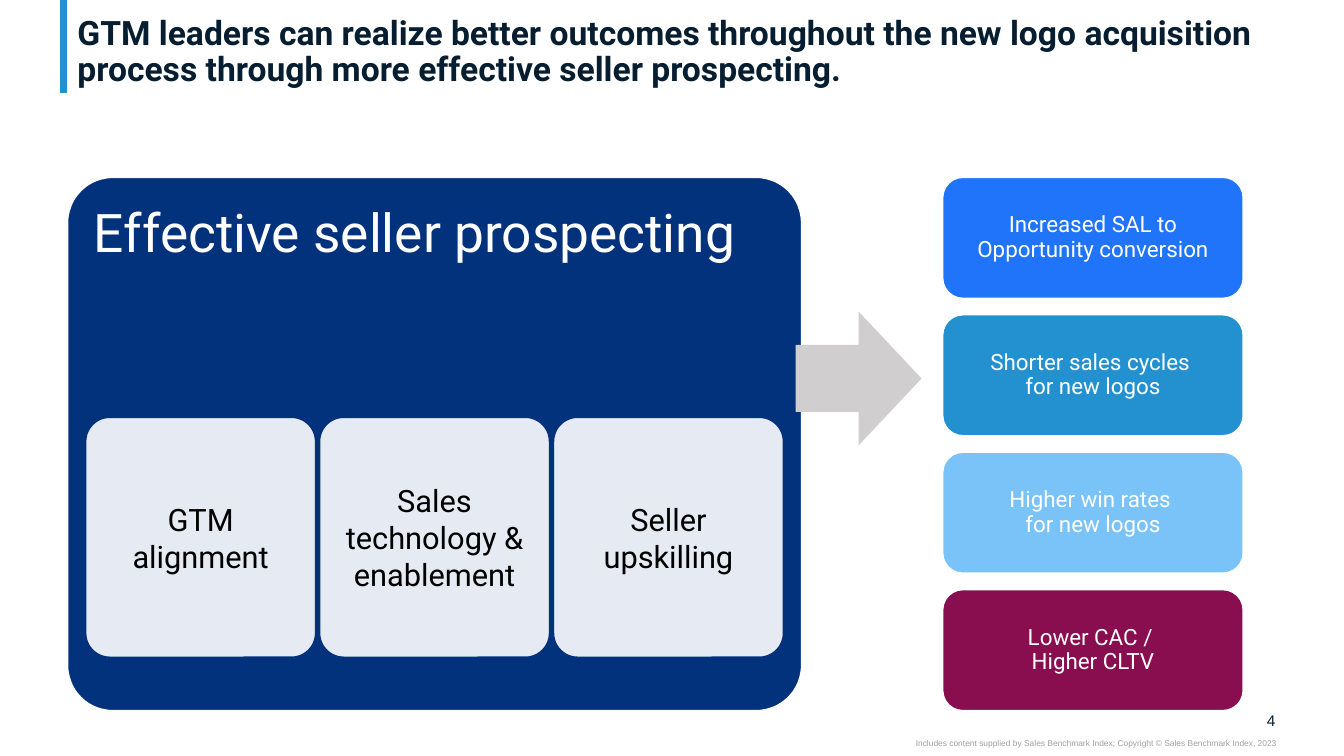
from copy import deepcopy

from lxml.etree import SubElement
from pptx import Presentation
from pptx.dml.color import RGBColor
from pptx.enum.shapes import MSO_CONNECTOR as CONNECTOR, MSO_SHAPE as SHAPE
from pptx.enum.text import MSO_ANCHOR as ANCHOR, PP_ALIGN as ALIGN
from pptx.oxml.ns import qn
from pptx.util import Inches, Pt

# Content
TITLE = ("GTM leaders can realize better outcomes throughout the new logo acquisition "
         "process through more effective seller prospecting.")
DRIVER = "Effective seller prospecting"
ENABLERS = ["GTM alignment", "Sales technology & enablement", "Seller\nupskilling"]
OUTCOMES = [
    ("Increased SAL to Opportunity conversion", "1F74FA"),
    ("Shorter sales cycles \nfor new logos", "2391CF"),
    ("Higher win rates \nfor new logos", "7AC3F8"),
    ("Lower CAC / \nHigher CLTV", "880E4F"),
]
PAGE = "4"
CREDIT = ("Includes content supplied by Sales Benchmark Index; "
          "Copyright © Sales Benchmark Index, 2023")

NAVY, INK, ACCENT, WHITE = "03327C", "071E31", "2391CF", "FFFFFF"

# Layout in inches
TOP, HEIGHT = 1.76, 5.29
PANEL_LEFT, PANEL_WIDTH = 0.67, 7.28
CARD_LEFT, CARD_TOP, CARD_WIDTH, CARD_HEIGHT = 0.85, 4.14, 2.28, 2.38
CARD_STEP = 2.32
OUTCOME_LEFT, OUTCOME_WIDTH, OUTCOME_HEIGHT = 9.35, 2.98, 1.2
OUTCOME_STEP = (HEIGHT - OUTCOME_HEIGHT) / (len(OUTCOMES) - 1)

prs = Presentation()
prs.slide_width, prs.slide_height = Inches(13.33), Inches(7.5)
slide = prs.slides.add_slide(prs.slide_layouts[6])


def paint(color_format, color):
    color_format.rgb = RGBColor.from_string(color)


def write(shape, text, size, color, font="Roboto", bold=False, align=ALIGN.LEFT,
          anchor=ANCHOR.TOP, spacing=1.0, margins=(0, 0)):
    frame = shape.text_frame
    frame.word_wrap = True
    frame.vertical_anchor = anchor
    frame.margin_left = frame.margin_right = Inches(margins[0])
    frame.margin_top = frame.margin_bottom = Inches(margins[1])
    paragraph = frame.paragraphs[0]
    paragraph.text = text
    paragraph.alignment = align
    paragraph.line_spacing = spacing
    for run in paragraph.runs:
        run.font.name, run.font.size, run.font.bold = font, Pt(size), bold
        paint(run.font.color, color)
    # Line breaks take the size of the text around them
    for line_break in paragraph._p.findall(qn("a:br")):
        line_break.append(deepcopy(paragraph.runs[0]._r.get_or_add_rPr()))


def add_text(box, text, **style):
    write(slide.shapes.add_textbox(*map(Inches, box)), text, **style)


def add_block(kind, box, fill, line=None, corner=None):
    block = slide.shapes.add_shape(kind, *map(Inches, box))
    block.shadow.inherit = False
    block.fill.solid()
    paint(block.fill.fore_color, fill)
    if line:
        paint(block.line.color, line)
        block.line.width = Pt(1)
    else:
        block.line.fill.background()
    if corner:
        block.adjustments[0] = corner
    return block


# Title with accent bar
bar = slide.shapes.add_connector(CONNECTOR.STRAIGHT, Inches(0.63), 0, Inches(0.63), Inches(0.92))
paint(bar.line.color, ACCENT)
bar.line.width = Pt(5)
SubElement(bar._element.spPr, qn("a:effectLst"))
add_text((0.67, 0.04, 11.99, 0.84), TITLE, size=24, color=INK, bold=True,
         anchor=ANCHOR.BOTTOM, spacing=0.9, margins=(0.1, 0))

# Driver panel
panel = add_block(SHAPE.ROUNDED_RECTANGLE, (PANEL_LEFT, TOP, PANEL_WIDTH, HEIGHT),
                  NAVY, WHITE, corner=0.085)
write(panel, DRIVER, size=38, color=WHITE, spacing=0.9, margins=(0.13, 0.16))

# Enabler cards
for i, enabler in enumerate(ENABLERS):
    card = add_block(SHAPE.ROUNDED_RECTANGLE,
                     (CARD_LEFT + i * CARD_STEP, CARD_TOP, CARD_WIDTH, CARD_HEIGHT),
                     WHITE, NAVY, corner=0.105)
    white_fill = card._element.spPr.find(qn("a:solidFill"))
    SubElement(white_fill[0], qn("a:alpha"), val="90000")
    write(card, enabler, size=22, color="000000", align=ALIGN.CENTER,
          anchor=ANCHOR.MIDDLE, margins=(0.09, 0.09))

# Outcomes
for i, (outcome, color) in enumerate(OUTCOMES):
    block = add_block(SHAPE.ROUNDED_RECTANGLE,
                      (OUTCOME_LEFT, TOP + i * OUTCOME_STEP, OUTCOME_WIDTH, OUTCOME_HEIGHT),
                      color, WHITE)
    write(block, outcome, size=16, color=WHITE, align=ALIGN.CENTER,
          anchor=ANCHOR.MIDDLE, spacing=0.9, margins=(0.07, 0.03))

# Arrow from driver to outcomes
add_block(SHAPE.RIGHT_ARROW, (7.89, 3.09, 1.25, 1.33), "D0CECE")

# Footer
add_text((12.32, 7.05, 0.33, 0.19), PAGE, size=11, color=INK, font="Arial",
         align=ALIGN.RIGHT, anchor=ANCHOR.MIDDLE)
add_text((7.5, 7.32, 5.16, 0.1), CREDIT, size=6, color="A0A0A0", font="Arial",
         align=ALIGN.RIGHT)

prs.save("out.pptx")
